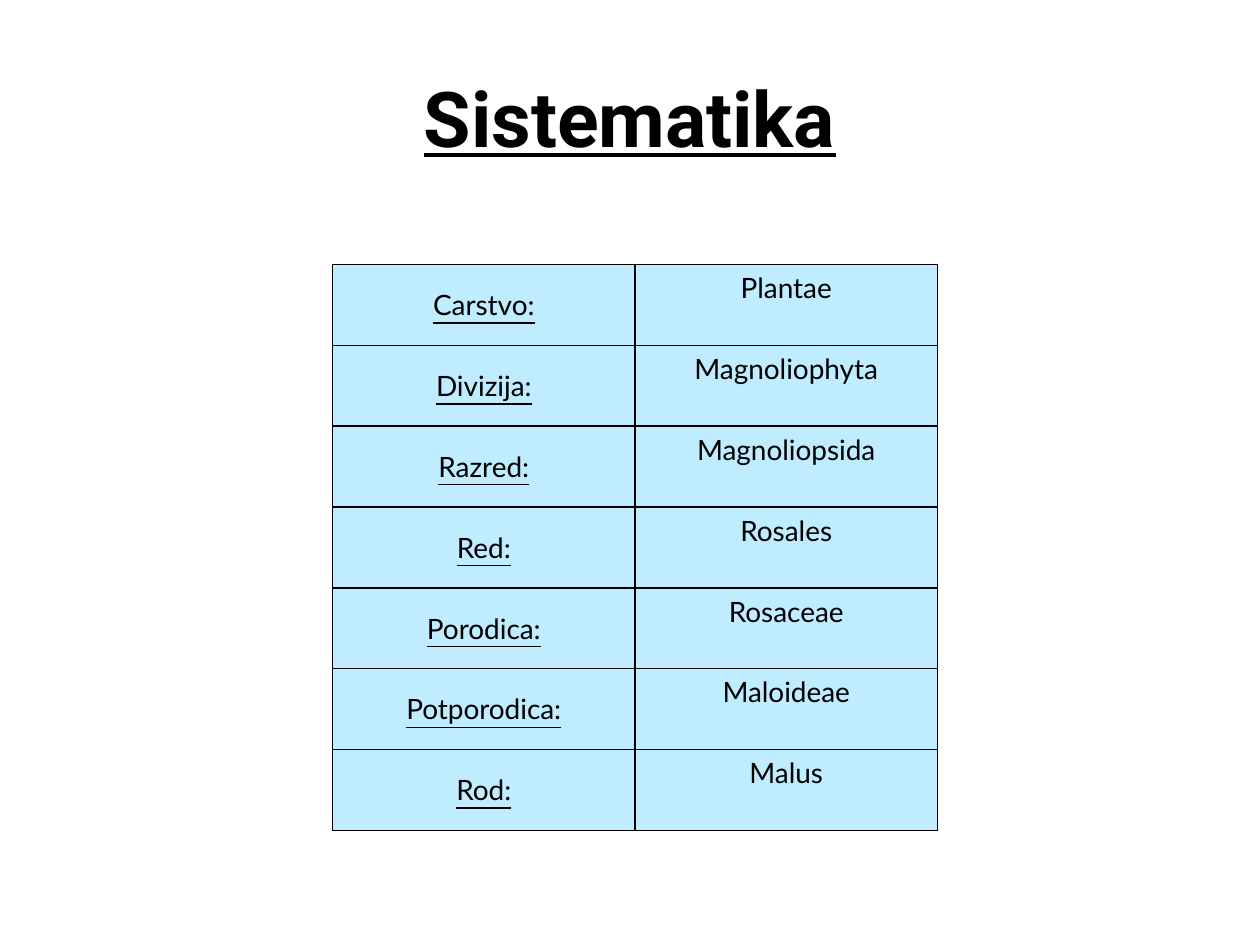
from lxml import etree
from pptx import Presentation
from pptx import util as u
from pptx.dml.color import RGBColor
from pptx.enum import text
from pptx.oxml.ns import qn


def paint(target, color):
    target.rgb = RGBColor.from_string(color)


def write(frame, content, format_values):
    para = frame.paragraphs[0]
    para.alignment = text.PP_ALIGN.CENTER
    span = para.add_run()
    span.text = content
    for name, value in format_values.items():
        setattr(span.font, name, value)
    paint(span.font.color, "000000")


deck = Presentation()
deck.slide_width, deck.slide_height = u.Inches(10), u.Inches(7.5)
page = deck.slides.add_slide(deck.slide_layouts[5])

title = page.shapes.title
title.left, title.top = u.Inches(0.5), u.Inches(0.3)
title.width, title.height = u.Inches(9), u.Inches(1.25)
title.text_frame.vertical_anchor = text.MSO_ANCHOR.MIDDLE
write(title.text_frame, "Sistematika",
      {"name": "Roboto", "size": u.Pt(44), "bold": True, "underline": True})

ranks = [
    ("Carstvo:", "Plantae"),
    ("Divizija:", "Magnoliophyta"),
    ("Razred:", "Magnoliopsida"),
    ("Red:", "Rosales"),
    ("Porodica:", "Rosaceae"),
    ("Potporodica:", "Maloideae"),
    ("Rod:", "Malus"),
]
taxonomy = page.shapes.add_table(
    len(ranks), 2, u.Inches(2.64), u.Inches(2.1), u.Inches(4.8), u.Inches(4.49)
).table
taxonomy.first_row = False
taxonomy.horz_banding = False
margin = u.Inches(0.02)
bottom_margins = [margin, u.Inches(0.29)]

for row, rank in enumerate(ranks):
    for column, content in enumerate(rank):
        cell = taxonomy.cell(row, column)
        cell_format = {
            "margin_left": margin,
            "margin_right": margin,
            "margin_top": margin,
            "margin_bottom": bottom_margins[column],
            "vertical_anchor": text.MSO_ANCHOR.MIDDLE,
        }
        for name, value in cell_format.items():
            setattr(cell, name, value)
        write(cell.text_frame, content,
              {"name": "Lato", "size": u.Pt(16), "bold": False, "underline": column == 0})

        properties = cell._tc.get_or_add_tcPr()
        for side in ("a:lnL", "a:lnR", "a:lnT", "a:lnB"):
            border = etree.SubElement(properties, qn(side), w=str(u.Pt(1)))
            fill = etree.SubElement(border, qn("a:solidFill"))
            etree.SubElement(fill, qn("a:srgbClr"), val="000000")
        cell.fill.solid()
        paint(cell.fill.fore_color, "BFECFF")

deck.save("out.pptx")
